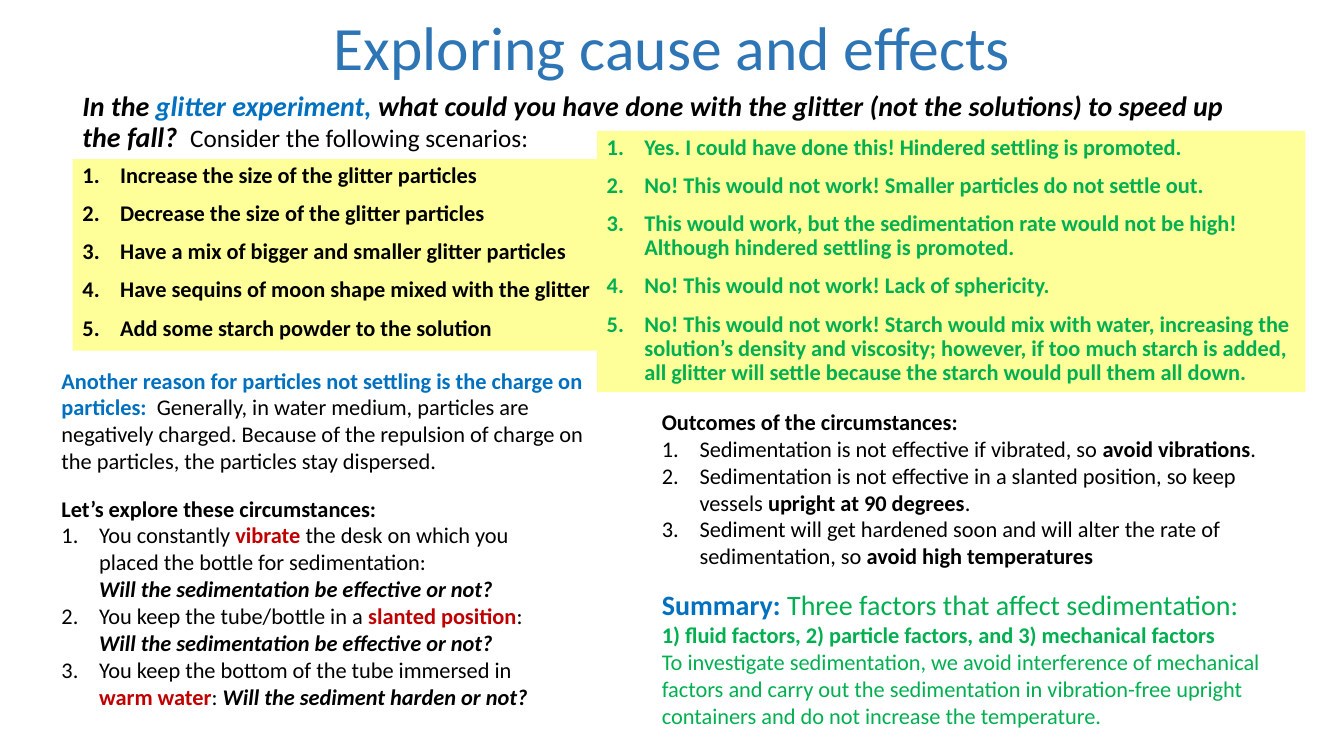
import pptx
import pptx.util
import pptx.dml.color
import pptx.enum.text
import lxml.etree
from pptx.oxml.ns import qn

Cm = pptx.util.Cm
Pt = pptx.util.Pt
ANCHOR = pptx.enum.text.MSO_ANCHOR
COLORS = {
    "title": "2E75B6",
    "black": "000000",
    "blue": "0070C0",
    "green": "00B050",
    "red": "C00000",
    "yellow": "FFFF99",
}


def rgb(name):
    return pptx.dml.color.RGBColor.from_string(COLORS[name])


def fill_text(tf, paragraphs, line_spacing=None, space_before=0, anchor=ANCHOR.TOP):
    tf.word_wrap = True
    tf.auto_size = pptx.enum.text.MSO_AUTO_SIZE.NONE
    tf.vertical_anchor = anchor
    for i, (numbered, runs) in enumerate(paragraphs):
        p = tf.paragraphs[0] if i == 0 else tf.add_paragraph()
        p.space_before = Pt(space_before)
        if line_spacing:
            p.line_spacing = line_spacing
        if numbered:
            pPr = p._p.get_or_add_pPr()
            pPr.set("marL", str(Cm(0.95)))
            pPr.set("indent", str(-Cm(0.95)))
            lxml.etree.SubElement(pPr, qn("a:buFont"), typeface="+mj-lt")
            lxml.etree.SubElement(pPr, qn("a:buAutoNum"), type="arabicPeriod")
        for text, color, style, size in runs:
            r = p.add_run()
            r.text = text.rstrip("\n")
            r.font.name = "Calibri"
            r.font.size = Pt(size)
            r.font.bold = "b" in style
            r.font.italic = "i" in style
            r.font.color.rgb = rgb(color)
            if text.endswith("\n"):
                p.add_line_break()


prs = pptx.Presentation()
prs.slide_width = Cm(33.87)
prs.slide_height = Cm(19.05)
s = prs.slides.add_slide(prs.slide_layouts[5])

title = s.shapes.title
title.left, title.top, title.width, title.height = Cm(1.7), Cm(0.64), Cm(30.48), Cm(1.27)
fill_text(title.text_frame, [(False, [("Exploring cause and effects", "title", "", 44)])],
          0.9, anchor=ANCHOR.MIDDLE)
title.text_frame.paragraphs[0].alignment = pptx.enum.text.PP_ALIGN.CENTER

scenarios = [
    "Increase the size of the glitter particles",
    "Decrease the size of the glitter particles",
    "Have a mix of bigger and smaller glitter particles",
    "Have sequins of moon shape mixed with the glitter",
    "Add some starch powder to the solution",
]
answers = [
    "Yes. I could have done this! Hindered settling is promoted.",
    "No! This would not work! Smaller particles do not settle out.",
    "This would work, but the sedimentation rate would not be high! "
    "Although hindered settling is promoted.",
    "No! This would not work! Lack of sphericity.",
    "No! This would not work! Starch would mix with water, increasing the solution’s density "
    "and viscosity; however, if too much starch is added, all glitter will settle because "
    "the starch would pull them all down.",
]
panels = [
    ((1.83, 4.01, 30.35, 4.83), scenarios, "black"),
    ((15.04, 3.3, 17.86, 6.58), answers, "green"),
]
for box, items, color in panels:
    sp = s.shapes.add_textbox(*map(Cm, box))
    sp.fill.solid()
    sp.fill.fore_color.rgb = rgb("yellow")
    fill_text(sp.text_frame, [(True, [(item, color, "b", 16)]) for item in items], 0.9, 10)

charge = [
    (False, [
        ("Another reason for particles not settling is the charge on particles:  ", "blue", "b", 16),
        ("Generally, in water medium, particles are negatively charged. Because of the repulsion "
         "of charge on the particles, the particles stay dispersed.", "black", "", 16),
    ]),
]
effective = ("Will the sedimentation be effective or not?", "black", "bi", 16)
circumstances = [
    (False, [("Let’s explore these circumstances:", "black", "b", 16)]),
    (True, [
        ("You constantly ", "black", "", 16),
        ("vibrate ", "red", "b", 16),
        ("the desk on which you placed the bottle for sedimentation: \n", "black", "", 16),
        effective,
    ]),
    (True, [
        ("You keep the tube/bottle in a ", "black", "", 16),
        ("slanted position", "red", "b", 16),
        (": \n", "black", "", 16),
        effective,
    ]),
    (True, [
        ("You keep the bottom of the tube immersed in ", "black", "", 16),
        ("warm water", "red", "b", 16),
        (": ", "black", "", 16),
        ("Will the sediment harden or not?", "black", "bi", 16),
    ]),
]
outcomes = [
    (False, [("Outcomes of the circumstances:", "black", "b", 16)]),
    (True, [
        ("Sedimentation is not effective if vibrated, so ", "black", "", 16),
        ("avoid vibrations", "black", "b", 16),
        (".", "black", "", 16),
    ]),
    (True, [
        ("Sedimentation is not effective in a slanted position, so keep vessels ", "black", "", 16),
        ("upright at 90 degrees", "black", "b", 16),
        (".", "black", "", 16),
    ]),
    (True, [
        ("Sediment will get hardened soon and will alter the rate of sedimentation, so ",
         "black", "", 16),
        ("avoid high temperatures", "black", "b", 16),
    ]),
]
summary = [
    (False, [
        ("Summary: ", "blue", "b", 20),
        ("Three factors that affect sedimentation:", "green", "", 20),
    ]),
    (False, [("1) fluid factors, 2) particle factors, and 3) mechanical factors", "green", "b", 16)]),
    (False, [
        ("To investigate sedimentation, we avoid interference of mechanical factors and carry out "
         "the sedimentation in vibration-free upright containers and do not increase the "
         "temperature.", "green", "", 16),
    ]),
]
question = [
    (False, [
        ("In the ", "black", "bi", 20),
        ("glitter experiment, ", "blue", "bi", 20),
        ("what could you have done with the glitter (not the solutions) to speed up the fall?  ",
         "black", "bi", 20),
        ("Consider the following scenarios:", "black", "", 18),
    ]),
]
notes = [
    ((1.3, 9.07, 14.2, 3.05), charge, None, ANCHOR.MIDDLE),
    ((1.3, 12.34, 12.73, 6.17), circumstances, None, ANCHOR.TOP),
    ((16.43, 10.16, 16.21, 4.52), outcomes, None, ANCHOR.TOP),
    ((16.43, 14.68, 16.08, 3.84), summary, None, ANCHOR.TOP),
    ((1.83, 2.06, 30.23, 2.08), question, 0.9, ANCHOR.MIDDLE),
]
for box, paragraphs, line_spacing, anchor in notes:
    sp = s.shapes.add_textbox(*map(Cm, box))
    fill_text(sp.text_frame, paragraphs, line_spacing, anchor=anchor)

prs.save("out.pptx")
